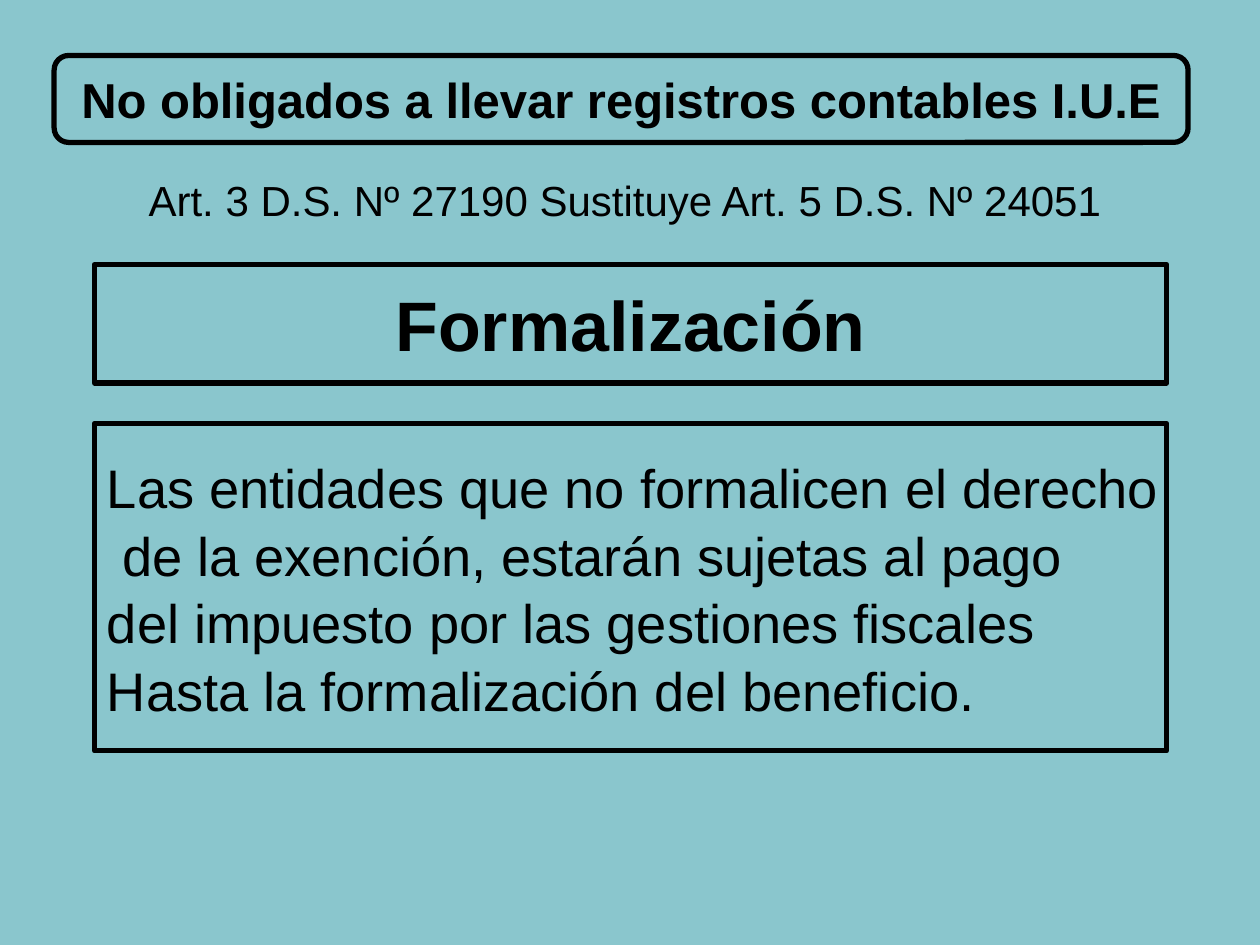
from dataclasses import dataclass

from pptx import Presentation, util as u
from pptx.dml.color import RGBColor
from pptx.enum import shapes, text

INK = "000000"
BACKGROUND = "8AC6CD"


@dataclass
class Panel:
    left: float
    top: float
    width: float
    height: float
    kind: shapes.MSO_SHAPE = shapes.MSO_SHAPE.RECTANGLE


def color(value: str) -> RGBColor:
    return RGBColor.from_string(value)


def place(shape, panel: Panel) -> None:
    shape.left, shape.top = u.Inches(panel.left), u.Inches(panel.top)
    shape.width, shape.height = u.Inches(panel.width), u.Inches(panel.height)


def draw_panel(slide, panel: Panel):
    shape = slide.shapes.add_shape(panel.kind, 0, 0, 0, 0)
    place(shape, panel)
    shape.shadow.inherit = False
    shape.fill.background()
    shape.line.color.rgb = color(INK)
    shape.line.width = u.Pt(3)
    return shape


def write(shape, content: str, size: float, bold: bool = False,
          align=text.PP_ALIGN.CENTER, wrap: bool = False) -> None:
    frame = shape.text_frame
    frame.text = content
    frame.word_wrap = wrap
    frame.auto_size = text.MSO_AUTO_SIZE.NONE
    frame.vertical_anchor = text.MSO_ANCHOR.MIDDLE
    for paragraph in frame.paragraphs:
        paragraph.alignment = align
        for run in paragraph.runs:
            run.font.name = "Arial"
            run.font.size = u.Pt(size)
            run.font.bold = bold
            run.font.color.rgb = color(INK)


def main() -> None:
    """Build the slide on formalising the I.U.E. exemption."""
    presentation = Presentation()
    presentation.slide_width, presentation.slide_height = u.Inches(10), u.Inches(7.5)
    slide = presentation.slides.add_slide(presentation.slide_layouts[5])
    slide.background.fill.solid()
    slide.background.fill.fore_color.rgb = color(BACKGROUND)

    rule = draw_panel(slide, Panel(0.75, 3.36, 8.51, 2.6))
    write(rule, "Las entidades que no formalicen el derecho\n"
                "de la exención, estarán sujetas al pago\n"
                "del impuesto por las gestiones fiscales\n"
                "Hasta la formalización del beneficio.",
          31, align=text.PP_ALIGN.LEFT)
    for paragraph in rule.text_frame.paragraphs:
        paragraph.line_spacing = 1.04
    indented = rule.text_frame.paragraphs[1]
    indented._p.get_or_add_pPr().set("marL", str(u.Inches(0.12)))

    title_panel = Panel(0.43, 0.44, 9, 0.69, shapes.MSO_SHAPE.ROUNDED_RECTANGLE)
    draw_panel(slide, title_panel)
    title = slide.shapes.title
    place(title, title_panel)
    write(title, "No obligados a llevar registros contables I.U.E", 28, bold=True, wrap=True)

    heading = draw_panel(slide, Panel(0.75, 2.1, 8.51, 0.94))
    write(heading, "Formalización", 40, bold=True)

    citation = slide.shapes.add_textbox(0, 0, 0, 0)
    place(citation, Panel(0.67, 1.39, 8.58, 0.39))
    write(citation, "Art. 3 D.S. Nº 27190 Sustituye Art. 5 D.S. Nº 24051", 24)

    presentation.save("out.pptx")


if __name__ == "__main__":
    main()
